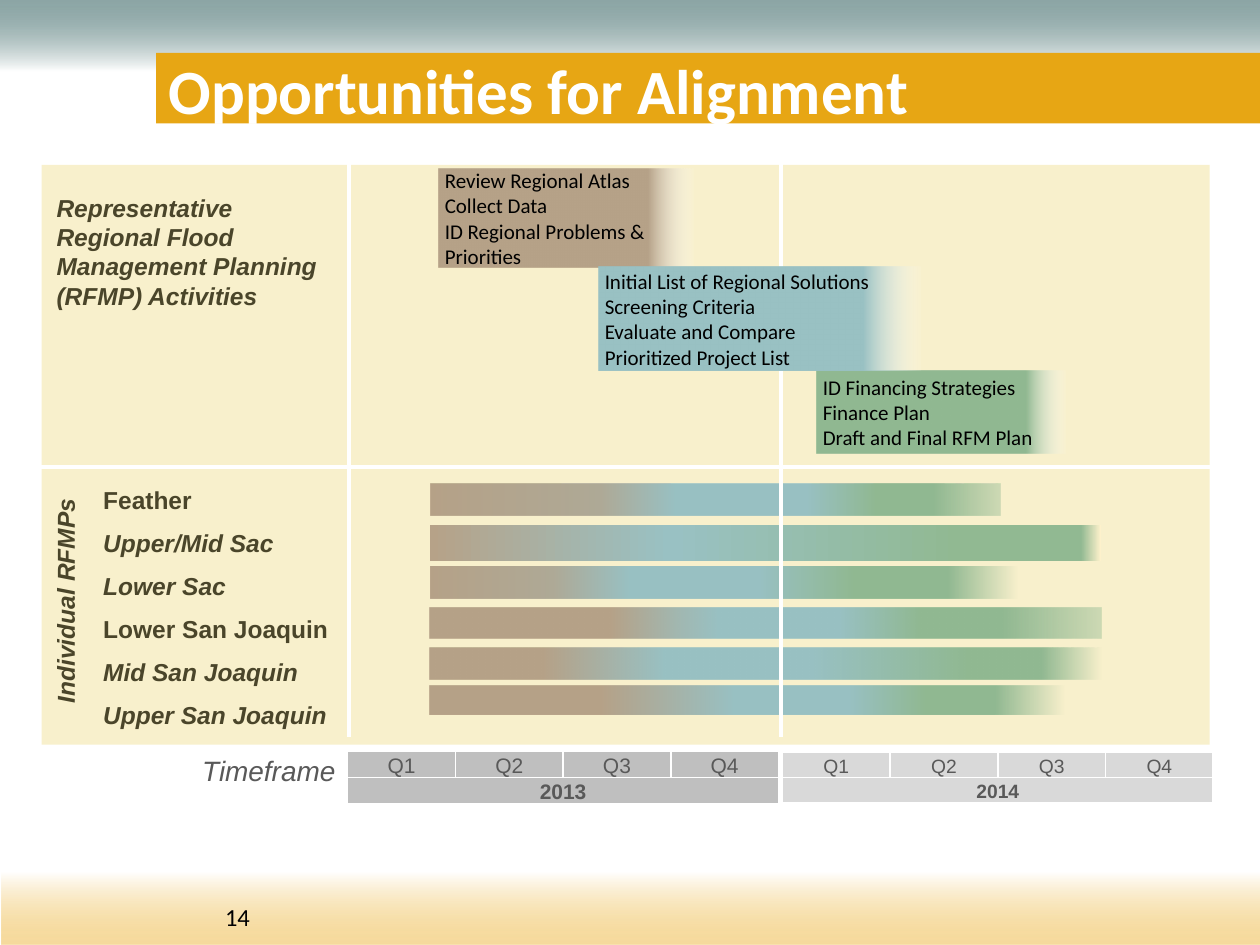
from dataclasses import dataclass

from lxml import etree
from pptx import Presentation
from pptx import util as u
from pptx.dml.color import RGBColor
from pptx.enum import shapes, text
from pptx.oxml import parse_xml
from pptx.oxml.ns import nsdecls, qn

WHITE, BROWN, BLUE, GREEN = "FFFFFF", "B6A288", "99C1C3", "91B992"
BLENDED, CREAM, OLIVE, GRAY = "AFAA97", "F8F0CC", "4A452A", "595959"
LEFT, CENTER, RIGHT = text.PP_ALIGN.LEFT, text.PP_ALIGN.CENTER, text.PP_ALIGN.RIGHT


@dataclass
class Box:
    left: float
    top: float
    width: float
    height: float

    def lengths(self) -> list:
        return [u.Inches(v) for v in (self.left, self.top, self.width, self.height)]


@dataclass
class Stop:
    position: int
    color: str
    opacity: int = 100


@dataclass
class Style:
    size: float
    color: str
    font: str = "Arial"
    bold: bool = False
    italic: bool = False
    align: text.PP_ALIGN = LEFT


@dataclass
class Activity:
    box: Box
    color: str
    solid_until: int
    lines: list[str]


@dataclass
class Region:
    name: str
    italic: bool
    bar: Box
    stops: list[Stop]


@dataclass
class Year:
    name: str
    box: Box
    size: int
    color: str


def rgb(value: str) -> RGBColor:
    return RGBColor.from_string(value)


def format_paragraph(paragraph, style: Style) -> None:
    paragraph.alignment = style.align
    for run in paragraph.runs:
        font = run.font
        font.name, font.size = style.font, u.Pt(style.size)
        font.bold, font.italic = style.bold, style.italic
        font.color.rgb = rgb(style.color)


def write(shape, content: str, style: Style) -> None:
    shape.text_frame.text = content
    for paragraph in shape.text_frame.paragraphs:
        format_paragraph(paragraph, style)


def add_label(slide, box: Box, content: str, style: Style):
    label = slide.shapes.add_textbox(*box.lengths())
    write(label, content, style)
    label.text_frame.word_wrap = True
    label.text_frame.auto_size = text.MSO_AUTO_SIZE.SHAPE_TO_FIT_TEXT
    return label


def add_block(slide, box: Box, color: str):
    shape = slide.shapes.add_shape(shapes.MSO_SHAPE.RECTANGLE, *box.lengths())
    shape.shadow.inherit = False
    shape.line.fill.background()
    shape.fill.solid()
    shape.fill.fore_color.rgb = rgb(color)
    return shape


def add_gradient(slide, box: Box, stops: list[Stop], angle: int = 0):
    shape = add_block(slide, box, WHITE)
    marks = "".join(
        f'<a:gs pos="{s.position * 1000}"><a:srgbClr val="{s.color}">'
        f'<a:alpha val="{s.opacity * 1000}"/></a:srgbClr></a:gs>'
        for s in stops
    )
    gradient = parse_xml(
        f'<a:gradFill {nsdecls("a")} rotWithShape="1"><a:gsLst>{marks}</a:gsLst>'
        f'<a:lin ang="{angle * 60000}" scaled="0"/></a:gradFill>'
    )
    properties = shape._element.spPr
    properties.replace(properties.find(qn("a:solidFill")), gradient)
    return shape


def add_divider(slide, x1: float, y1: float, x2: float, y2: float) -> None:
    ends = [u.Inches(v) for v in (x1, y1, x2, y2)]
    line = slide.shapes.add_connector(shapes.MSO_CONNECTOR.STRAIGHT, *ends)
    line.line.color.rgb = rgb(WHITE)
    line.line.width = u.Pt(2.25)
    etree.SubElement(line._element.spPr, qn("a:effectLst"))


def add_activity(slide, activity: Activity) -> None:
    stops = [Stop(0, activity.color), Stop(activity.solid_until, activity.color), Stop(100, WHITE, 7)]
    shape = add_gradient(slide, activity.box, stops)
    write(shape, "\n".join(activity.lines), Style(12, "000000", "Calibri"))
    frame = shape.text_frame
    frame.vertical_anchor = text.MSO_ANCHOR.MIDDLE
    frame.margin_left = frame.margin_right = u.Inches(0.05)
    frame.margin_top = frame.margin_bottom = 0


def format_cell(cell, content: str, style: Style, color: str) -> None:
    write(cell, content, style)
    cell.vertical_anchor = text.MSO_ANCHOR.BOTTOM
    cell.margin_left = cell.margin_right = cell.margin_top = u.Inches(0.01)
    cell.margin_bottom = 0
    properties = cell._tc.get_or_add_tcPr()
    for side in ("lnL", "lnR", "lnT", "lnB"):
        properties.append(parse_xml(
            f'<a:{side} {nsdecls("a")} w="12700"><a:solidFill>'
            f'<a:srgbClr val="{WHITE}"/></a:solidFill></a:{side}>'
        ))
    cell.fill.solid()
    cell.fill.fore_color.rgb = rgb(color)


def add_year(slide, year: Year) -> None:
    table = slide.shapes.add_table(2, 4, *year.box.lengths()).table
    for row in table.rows:
        row.height = u.Inches(year.box.height / 2)
    for column in range(4):
        quarter = Style(year.size, GRAY, align=CENTER)
        format_cell(table.cell(0, column), f"Q{column + 1}", quarter, year.color)
        total = Style(year.size, GRAY, bold=True, align=CENTER)
        format_cell(table.cell(1, column), "" if column else year.name, total, year.color)
    table.cell(1, 0).merge(table.cell(1, 3))


ACTIVITIES = [
    Activity(Box(3.48, 1.34, 2.02, 0.78), BROWN, 82,
             ["Review Regional Atlas", "Collect Data", "ID Regional Problems & Priorities"]),
    Activity(Box(6.48, 2.94, 1.98, 0.66), GREEN, 84,
             ["ID Financing Strategies", "Finance Plan", "Draft and Final RFM Plan"]),
    Activity(Box(4.75, 2.12, 2.56, 0.82), BLUE, 82,
             ["Initial List of Regional Solutions", "Screening Criteria",
              "Evaluate and Compare", "Prioritized Project List"]),
]
REGIONS = [
    Region("Feather", False, Box(3.42, 3.84, 4.52, 0.25),
           [Stop(0, BROWN), Stop(30, BLENDED), Stop(43, BLUE), Stop(66, BLUE),
            Stop(78, GREEN), Stop(88, GREEN), Stop(100, GREEN, 40)]),
    Region("Upper/Mid Sac", True, Box(3.41, 4.17, 5.33, 0.28),
           [Stop(0, BROWN), Stop(36, BLUE), Stop(79, GREEN), Stop(97, GREEN), Stop(100, "FFF2CC")]),
    Region("Lower Sac", True, Box(3.42, 4.5, 4.66, 0.25),
           [Stop(0, BROWN), Stop(21, BLENDED), Stop(34, BLUE), Stop(56, BLUE),
            Stop(72, GREEN), Stop(88, GREEN), Stop(100, GREEN, 0)]),
    Region("Lower San Joaquin", False, Box(3.41, 4.82, 5.33, 0.25),
           [Stop(0, BROWN), Stop(27, BROWN), Stop(37, "A2B8B1"), Stop(43, BLUE), Stop(61, BLUE),
            Stop(73, GREEN), Stop(85, GREEN), Stop(100, GREEN, 41)]),
    Region("Mid San Joaquin", True, Box(3.41, 5.14, 5.33, 0.25),
           [Stop(0, BROWN), Stop(17, BROWN), Stop(35, BLUE), Stop(57, BLUE),
            Stop(80, GREEN), Stop(91, GREEN), Stop(100, GREEN, 0)]),
    Region("Upper San Joaquin", True, Box(3.41, 5.44, 5.04, 0.23),
           [Stop(0, BROWN), Stop(27, BROWN), Stop(48, BLUE), Stop(66, BLUE),
            Stop(78, GREEN), Stop(89, GREEN), Stop(100, GREEN, 0)]),
]
YEARS = [
    Year("2013", Box(2.76, 5.96, 3.42, 0.4), 12, "BFBFBF"),
    Year("2014", Box(6.21, 5.97, 3.42, 0.4), 11, "D9D9D9"),
]


def main() -> None:
    presentation = Presentation()
    presentation.slide_width, presentation.slide_height = u.Inches(10), u.Inches(7.5)
    slide = presentation.slides.add_slide(presentation.slide_layouts[5])

    add_gradient(slide, Box(-0.01, 0, 10.03, 1.09), [Stop(0, "215352", 51), Stop(52, WHITE)], 90)
    add_block(slide, Box(1.24, 0.42, 8.76, 0.56), "E7A614")
    add_gradient(slide, Box(0.01, 6.39, 9.99, 1.11), [Stop(0, "EEB840", 51), Stop(52, WHITE)], 270)
    add_label(slide, Box(1.46, 7.11, 0.85, 0.34), "14", Style(14, "000000", "Calibri", align=CENTER))

    title = slide.shapes.title
    title.left, title.top, title.width, title.height = Box(1.24, 0.42, 8.77, 0.58).lengths()
    write(title, "Opportunities for Alignment", Style(36, WHITE, "Calibri", bold=True))
    title.text_frame.vertical_anchor = text.MSO_ANCHOR.MIDDLE
    title.text_frame.auto_size = text.MSO_AUTO_SIZE.NONE
    slide.shapes._spTree.append(title._element)

    add_block(slide, Box(0.33, 1.31, 9.27, 4.6), CREAM)
    heading = Style(14, OLIVE, bold=True, italic=True)
    add_label(slide, Box(0.35, 1.48, 2.32, 1.04),
              "Representative \vRegional Flood Management Planning (RFMP) Activities", heading)
    names = add_label(slide, Box(0.72, 3.8, 2.05, 2.01), "\n".join(r.name for r in REGIONS), heading)
    for region, paragraph in zip(REGIONS, names.text_frame.paragraphs):
        paragraph.space_after = u.Pt(7.8)
        paragraph.runs[0].font.italic = region.italic
        add_gradient(slide, region.bar, region.stops)
    group = add_label(slide, Box(-0.56, 4.6, 2.16, 0.34), "Individual RFMPs",
                      Style(14, OLIVE, bold=True, italic=True, align=CENTER))
    group.rotation = 270

    for year in YEARS:
        add_year(slide, year)
    add_label(slide, Box(1.04, 5.93, 1.72, 0.37), "Timeframe", Style(16, GRAY, italic=True, align=RIGHT))
    add_divider(slide, 0.32, 3.71, 9.99, 3.71)
    for x in (2.77, 6.2):
        add_divider(slide, x, 1.25, x, 5.85)
    for activity in ACTIVITIES:
        add_activity(slide, activity)
    presentation.save("out.pptx")


if __name__ == "__main__":
    main()
